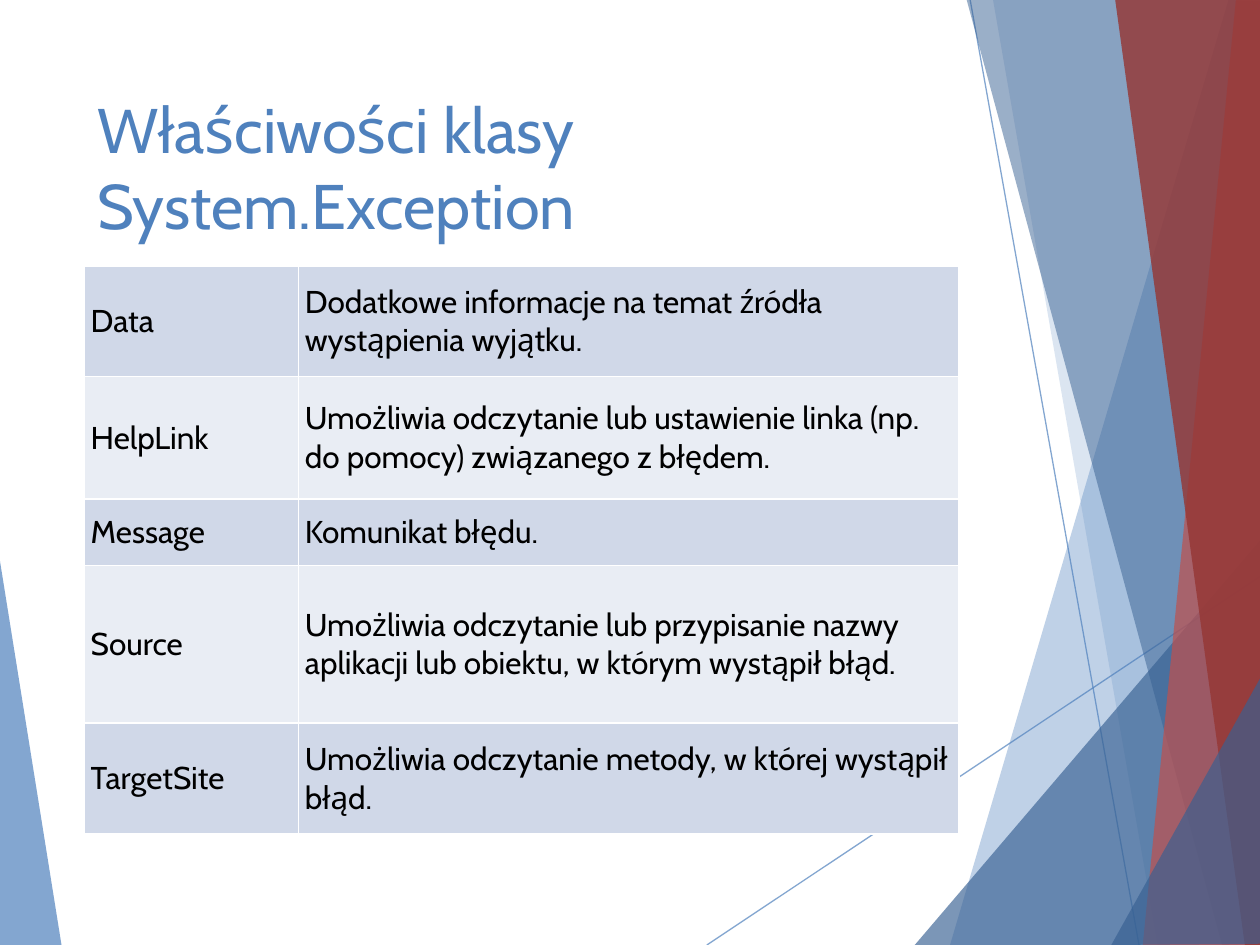
import pptx
import pptx.dml.color
import pptx.enum.text
import pptx.oxml
import pptx.oxml.ns
import pptx.util
from pptx.util import Inches

FONT = "Cabin"
BLUE, NAVY, RED, MAROON = "4F81BD", "376092", "C0504D", "953735"


def paint(color_format, color, opacity=100):
    """Set a colour from a hex string, with opacity in percent."""
    color_format.rgb = pptx.dml.color.RGBColor.from_string(color)
    if opacity < 100:
        clr = color_format._xFill.find(".//" + pptx.oxml.ns.qn("a:srgbClr"))
        alpha = pptx.oxml.parse_xml(f'<a:alpha {pptx.oxml.ns.nsdecls("a")} val="{opacity * 1000}"/>')
        clr.append(alpha)


def write(text_frame, text, size, color):
    run = text_frame.paragraphs[0].add_run()
    run.text = text
    run.font.name = FONT
    run.font.size = pptx.util.Pt(size)
    paint(run.font.color, color)


presentation = pptx.Presentation()
presentation.slide_width, presentation.slide_height = Inches(10), Inches(7.5)
slide = presentation.slides.add_slide(presentation.slide_layouts[5])

# Translucent shards along the edges, back to front; None marks the thin lines
shards = [
    ([(-0.01, 4.39), (0.49, 7.51), (-0.01, 7.5)], BLUE, 70),
    ([(5.61, 7.5), (10.01, 4.57)], None, 70),
    ([(7.7, 0), (9.04, 7.5)], None, 70),
    ([(9.75, 0), (7.54, 7.5), (10.02, 7.51), (10.01, 0.01)], BLUE, 36),
    ([(7.88, -0.01), (9.19, 7.5), (10.01, 7.5), (10.01, -0.01)], BLUE, 20),
    ([(7.26, 7.5), (10, 4.29), (10.01, 7.5)], NAVY, 66),
    ([(7.67, -0.01), (9.7, 7.5), (10.01, 7.49), (10.01, -0.01)], NAVY, 50),
    ([(9.81, -0.01), (9.07, 7.5), (10.01, 7.5), (10, -0.01)], RED, 70),
    ([(8.85, -0.01), (9.88, 7.5), (10.02, 7.5), (10, -0.01)], MAROON, 82),
    ([(8.82, 7.5), (10.02, 5.35), (10.02, 7.49)], NAVY, 66),
]
for corners, color, opacity in shards:
    points = [(Inches(x), Inches(y)) for x, y in corners]
    if color is None:
        ray = slide.shapes.add_connector(1, *points[0], *points[1])
        ray.line.width = pptx.util.Pt(0.75)
        ray.line.fill.solid()
        paint(ray.line.fill.fore_color, BLUE, opacity)
        ray._element.spPr.append(
            pptx.oxml.parse_xml(f'<a:effectLst {pptx.oxml.ns.nsdecls("a")}/>'))
        continue
    outline = slide.shapes.build_freeform(*points[0])
    outline.add_line_segments(points[1:], close=True)
    shard = outline.convert_to_shape()
    shard.shadow.inherit = False
    shard.line.fill.background()
    shard.fill.solid()
    paint(shard.fill.fore_color, color, opacity)

title = slide.shapes.title
title.left, title.top, title.width, title.height = (
    Inches(0.67), Inches(0.67), Inches(6.94), Inches(1.44))
title.text_frame.word_wrap = True
title.text_frame.auto_size = pptx.enum.text.MSO_AUTO_SIZE.NONE
title.text_frame.vertical_anchor = pptx.enum.text.MSO_ANCHOR.TOP
title.text_frame.paragraphs[0].alignment = pptx.enum.text.PP_ALIGN.LEFT
write(title.text_frame, "Właściwości klasy System.Exception", 36, BLUE)

properties = [
    ("Data", "Dodatkowe informacje na temat źródła wystąpienia wyjątku.", 0.88),
    ("HelpLink", "Umożliwia odczytanie lub ustawienie linka (np. do pomocy) "
                 "związanego z błędem.", 0.97),
    ("Message", "Komunikat błędu.", 0.53),
    ("Source", "Umożliwia odczytanie lub przypisanie nazwy aplikacji lub obiektu, "
               "w którym wystąpił błąd.", 1.25),
    ("TargetSite", "Umożliwia odczytanie metody, w której wystąpił błąd.", 0.88),
]
table = slide.shapes.add_table(
    len(properties), 2, Inches(0.67), Inches(2.11), Inches(6.94), Inches(4.5)).table
table.first_row = False
table.columns[0].width, table.columns[1].width = Inches(1.7), Inches(5.24)

for row, (name, description, height) in enumerate(properties):
    table.rows[row].height = Inches(height)
    for column, text in enumerate((name, description)):
        cell = table.cell(row, column)
        cell.vertical_anchor = pptx.enum.text.MSO_ANCHOR.MIDDLE
        cell.margin_left = cell.margin_right = Inches(0.05)
        cell.margin_top = cell.margin_bottom = Inches(0.05)
        for side in "LRTB":
            cell._tc.get_or_add_tcPr().append(pptx.oxml.parse_xml(
                f'<a:ln{side} {pptx.oxml.ns.nsdecls("a")} w="12700"><a:solidFill>'
                f'<a:srgbClr val="FFFFFF"/></a:solidFill></a:ln{side}>'))
        cell.fill.solid()
        paint(cell.fill.fore_color, "E9EDF4" if row % 2 else "D0D8E8")
        write(cell.text_frame, text, 18, "000000")

presentation.save("out.pptx")
